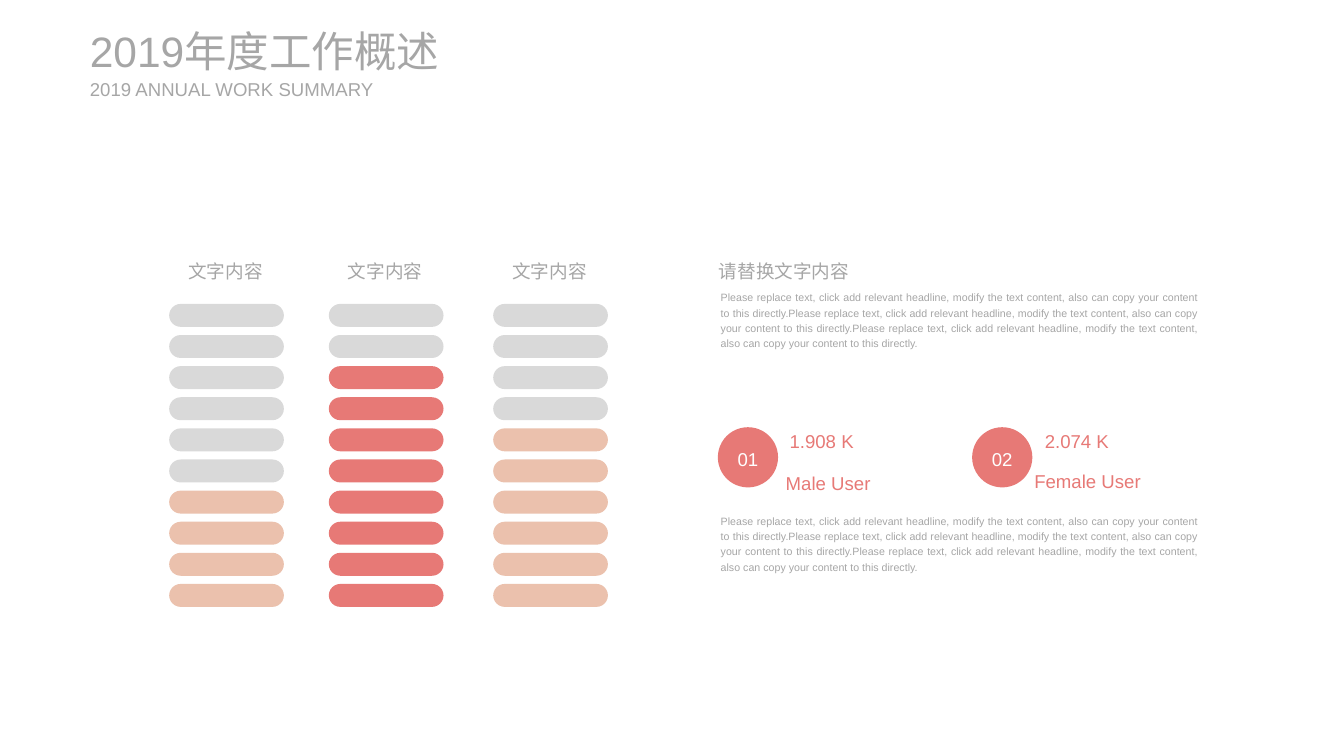
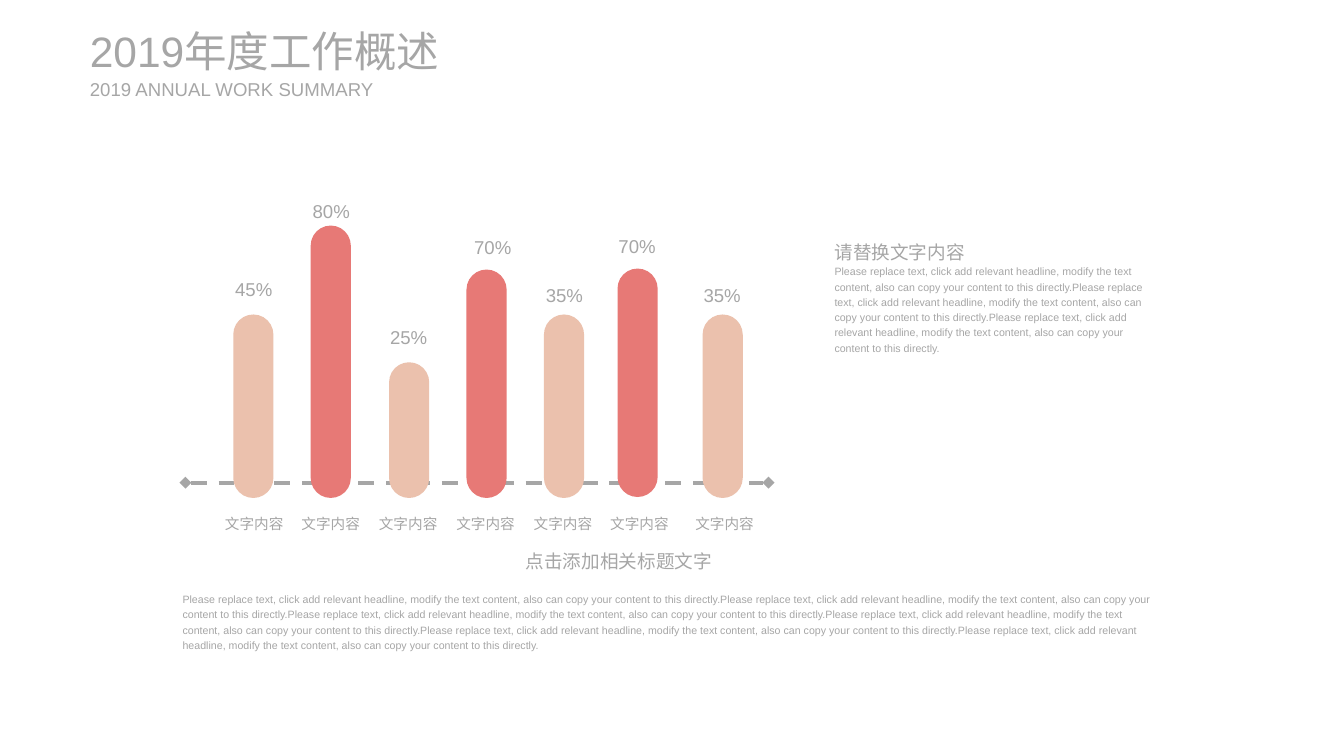
from lxml import etree
from pptx import Presentation
from pptx.dml.color import RGBColor
from pptx.enum.dml import MSO_LINE
from pptx.enum.shapes import MSO_CONNECTOR, MSO_SHAPE
from pptx.enum.text import MSO_ANCHOR, PP_ALIGN
from pptx.oxml.ns import qn
from pptx.util import Inches, Pt

GRAY = RGBColor(0xA6, 0xA6, 0xA6)
PALE = RGBColor(0xD9, 0xD9, 0xD9)
PEACH = RGBColor(0xEB, 0xC1, 0xAD)
CORAL = RGBColor(0xE7, 0x79, 0x76)
WHITE = RGBColor(0xFF, 0xFF, 0xFF)

PILL = MSO_SHAPE.ROUNDED_RECTANGLE
OVAL = MSO_SHAPE.OVAL
STRAIGHT = MSO_CONNECTOR.STRAIGHT
DASH = MSO_LINE.DASH
TOP, MIDDLE = MSO_ANCHOR.TOP, MSO_ANCHOR.MIDDLE
LEFT, CENTER, JUSTIFY = PP_ALIGN.LEFT, PP_ALIGN.CENTER, PP_ALIGN.JUSTIFY

FONT = "Arial"
LABEL = "文字内容"
HEADING = "请替换文字内容"
SENTENCE = (
    "Please replace text, click add relevant headline, modify the text content, "
    "also can copy your content to this directly."
)

LEVEL_COUNT = 10
LEVEL_TOP, LEVEL_BOTTOM = 3.18, 6.11
LEVEL_COLUMNS = [(1.77, 4, PEACH), (3.44, 8, CORAL), (5.16, 6, PEACH)]

USERS = [
    ("01", 7.51, "1.908 K", (8.26, 4.45), "Male User", (8.22, 4.89)),
    ("02", 10.17, "2.074 K", (10.93, 4.45), "Female User", (10.82, 4.87)),
]

BAR_WIDTH = 0.42
BARS = [
    ("45%", 2.44, 3.29, 1.92, (2.41, 2.83), 2.2, PEACH),
    ("80%", 3.25, 2.36, 2.85, (3.22, 2.01), 3, CORAL),
    ("25%", 4.07, 3.79, 1.42, (4.03, 3.33), 3.81, PEACH),
    ("70%", 4.88, 2.82, 2.39, (4.91, 2.39), 4.62, CORAL),
    ("35%", 5.69, 3.29, 1.92, (5.66, 2.89), 5.43, PEACH),
    ("70%", 6.46, 2.81, 2.39, (6.42, 2.38), 6.23, CORAL),
    ("35%", 7.35, 3.29, 1.92, (7.31, 2.89), 7.12, PEACH),
]


def write_text(shape, text, size=14, color=GRAY, align=LEFT, anchor=TOP, spacing=1.2):
    frame = shape.text_frame
    frame.word_wrap = True
    frame.vertical_anchor = anchor
    frame.margin_left = frame.margin_right = 0
    frame.margin_top = frame.margin_bottom = 0
    frame.text = text
    para = frame.paragraphs[0]
    para.alignment = align
    para.line_spacing = spacing
    font = para.runs[0].font
    font.name = FONT
    font.size = Pt(size)
    font.color.rgb = color


def add_text(page, text, left, top, width, height, **style):
    box = page.shapes.add_textbox(
        Inches(left), Inches(top), Inches(width), Inches(height))
    write_text(box, text, **style)


def add_panel(page, text, left, top, width, height, **style):
    right, bottom = left + width, top + height
    builder = page.shapes.build_freeform(Inches(left), Inches(top))
    corners = [(right, top), (right, bottom), (left, bottom)]
    builder.add_line_segments([(Inches(x), Inches(y)) for x, y in corners])
    panel = builder.convert_to_shape()
    panel.shadow.inherit = False
    panel.fill.background()
    panel.line.fill.background()
    write_text(panel, text, **style)


def add_filled(page, kind, left, top, width, height, color):
    shape = page.shapes.add_shape(
        kind, Inches(left), Inches(top), Inches(width), Inches(height))
    shape.shadow.inherit = False
    shape.fill.solid()
    shape.fill.fore_color.rgb = color
    shape.line.fill.background()
    return shape


def add_pill(page, left, top, width, height, color):
    pill = add_filled(page, PILL, left, top, width, height, color)
    pill.adjustments[0] = 0.5


def add_axis(page, left, right, top):
    axis = page.shapes.add_connector(
        STRAIGHT, Inches(left), Inches(top), Inches(right), Inches(top))
    axis.line.color.rgb = GRAY
    axis.line.width = Pt(3)
    axis.line.dash_style = DASH
    outline = axis._element.spPr.find(qn("a:ln"))
    for end in ("a:headEnd", "a:tailEnd"):
        etree.SubElement(outline, qn(end), type="diamond")
    etree.SubElement(axis._element.spPr, qn("a:effectLst"))


def add_page(deck):
    page = deck.slides.add_slide(deck.slide_layouts[6])
    add_text(page, "2019年度工作概述", 0.94, 0.26, 4.32, 0.54, size=32,
             anchor=MIDDLE, spacing=1.0)
    add_text(page, "2019 ANNUAL WORK SUMMARY", 0.94, 0.81, 3.07, 0.24,
             anchor=MIDDLE, spacing=1.0)
    return page


def add_level_column(page, left, filled, color):
    add_text(page, LABEL, left + 0.05, 2.72, 1.08, 0.24, align=CENTER, spacing=1.0)
    step = (LEVEL_BOTTOM - LEVEL_TOP) / (LEVEL_COUNT - 1)
    for level in range(LEVEL_COUNT):
        level_color = color if level >= LEVEL_COUNT - filled else PALE
        add_pill(page, left, LEVEL_TOP + level * step, 1.2, 0.24, level_color)


def add_user(page, number, left, amount, amount_at, name, name_at):
    badge = add_filled(page, OVAL, left, 4.47, 0.63, 0.63, CORAL)
    write_text(badge, number, color=WHITE, align=CENTER, anchor=MIDDLE)
    add_text(page, amount, *amount_at, 1.3, 0.26, color=CORAL)
    add_text(page, name, *name_at, 1.3, 0.26, color=CORAL)


def add_bar(page, value, left, top, height, value_at, label_left, color):
    add_pill(page, left, top, BAR_WIDTH, height, color)
    add_panel(page, value, *value_at, 0.49, 0.35, align=CENTER, anchor=MIDDLE)
    add_panel(page, LABEL, label_left, 5.36, 0.92, 0.2, size=11,
              align=CENTER, anchor=MIDDLE)


def build_levels(deck):
    page = add_page(deck)
    for column in LEVEL_COLUMNS:
        add_level_column(page, *column)
    add_text(page, HEADING, 7.52, 2.67, 4.48, 0.26, align=JUSTIFY)
    for top in (3.02, 5.36):
        add_text(page, SENTENCE * 3, 7.54, top, 5, 0.65, size=8, align=JUSTIFY)
    for user in USERS:
        add_user(page, *user)


def build_bars(deck):
    page = add_page(deck)
    add_axis(page, 1.94, 8.04, 5.05)
    for bar in BARS:
        add_bar(page, *bar)
    add_panel(page, SENTENCE * 3, 8.73, 2.75, 3.41, 0.97, size=8)
    add_panel(page, HEADING, 8.73, 2.47, 1.6, 0.26, align=JUSTIFY)
    add_panel(page, SENTENCE * 6, 1.91, 6.18, 10.24, 0.64, size=8)
    add_panel(page, "点击添加相关标题文字", 5.5, 5.71, 2.02, 0.26, align=JUSTIFY)


def main():
    deck = Presentation()
    deck.slide_width = Inches(14.06)
    deck.slide_height = Inches(7.91)
    build_levels(deck)
    build_bars(deck)
    deck.save("out.pptx")


if __name__ == "__main__":
    main()
